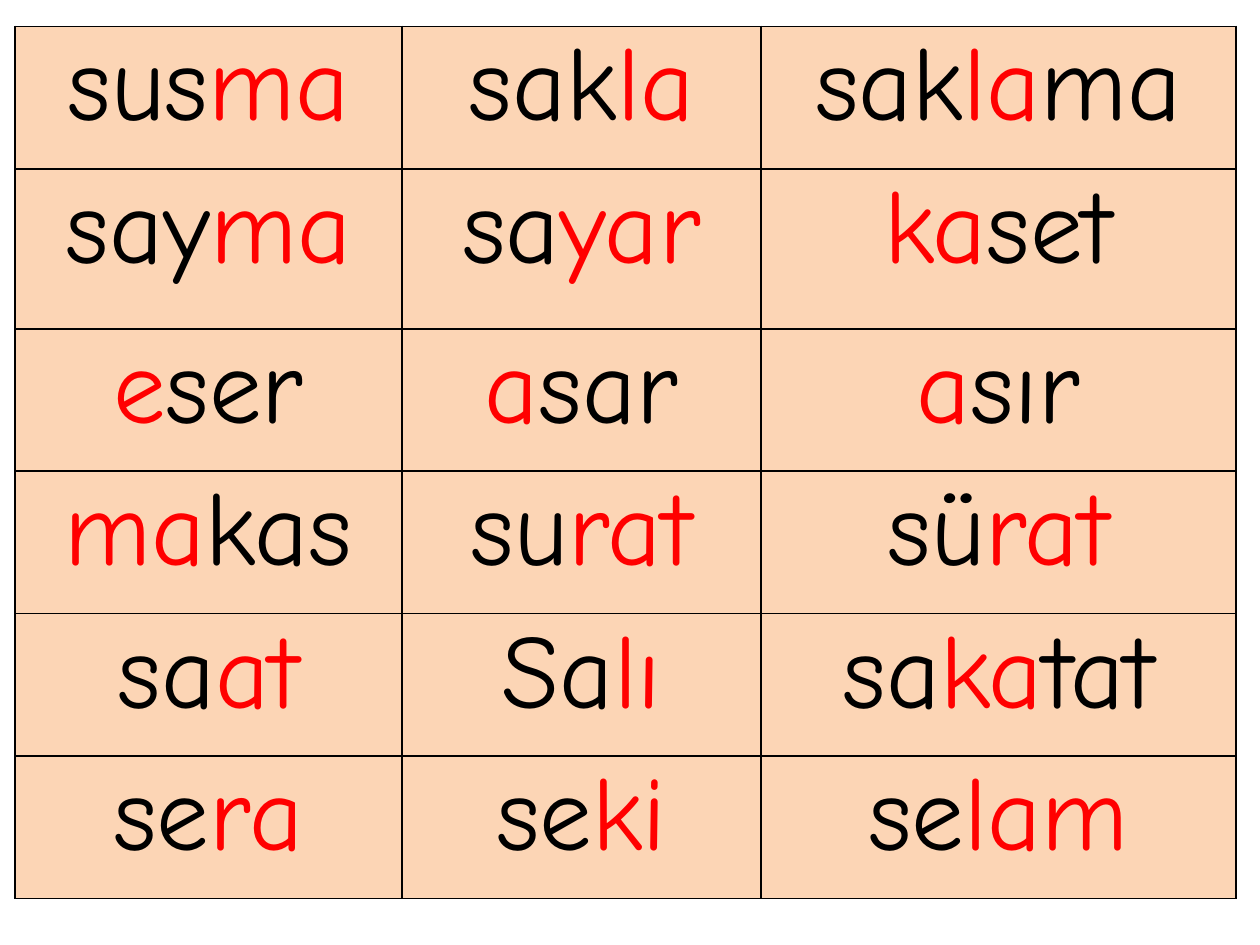
"""Build a slide with a table of Turkish words whose syllables alternate in black and red."""
import lxml.etree
import pptx
import pptx.dml.color
import pptx.enum.text
import pptx.oxml.ns
import pptx.util

Inches = pptx.util.Inches
Color = pptx.dml.color.RGBColor.from_string

theme = {
    "font": "Comic Neue",
    "size": pptx.util.Pt(60),
    "syllables": ("000000", "FF0000"),
    "cell": "FCD5B5",
    "border": "000000",
    "border_width": pptx.util.Pt(1),
}
words = [
    ["sus|ma", "sak|la", "sak|la|ma"],
    ["say|ma", "sa|yar", "|ka|set"],
    ["|e|ser", "|a|sar", "|a|sır"],
    ["|ma|kas", "su|rat", "sü|rat"],
    ["sa|at", "Sa|lı", "sa|ka|tat"],
    ["se|ra", "se|ki", "se|lam"],
]
column_widths = [3.07, 2.85, 3.77]
row_heights = [1.13, 1.27] + [1.13] * 4
cell_format = {
    "margin_left": Inches(0.07),
    "margin_right": Inches(0.07),
    "margin_top": 0,
    "margin_bottom": 0,
    "vertical_anchor": pptx.enum.text.MSO_ANCHOR.TOP,
}
font_format = {"name": theme["font"], "size": theme["size"], "bold": False}


def add_borders(cell):
    properties = cell._tc.get_or_add_tcPr()
    qn = pptx.oxml.ns.qn
    for side in ("lnL", "lnR", "lnT", "lnB"):
        line = lxml.etree.SubElement(properties, qn(f"a:{side}"), w=str(theme["border_width"]))
        fill = lxml.etree.SubElement(line, qn("a:solidFill"))
        lxml.etree.SubElement(fill, qn("a:srgbClr"), val=theme["border"])


deck = pptx.Presentation()
deck.slide_width, deck.slide_height = Inches(10), Inches(7.5)
page = deck.slides.add_slide(deck.slide_layouts[6])

frame = page.shapes.add_table(
    len(row_heights), len(column_widths), Inches(0.12), Inches(0.21),
    Inches(sum(column_widths)), Inches(sum(row_heights)),
)
table = frame.table
for column, width in zip(table.columns, column_widths):
    column.width = Inches(width)
for row, height in zip(table.rows, row_heights):
    row.height = Inches(height)

for row, row_words in zip(table.rows, words):
    for cell, word in zip(row.cells, row_words):
        for name, value in cell_format.items():
            setattr(cell, name, value)
        add_borders(cell)
        cell.fill.solid()
        cell.fill.fore_color.rgb = Color(theme["cell"])
        para = cell.text_frame.paragraphs[0]
        para.alignment = pptx.enum.text.PP_ALIGN.CENTER
        for index, syllable in enumerate(word.split("|")):
            if syllable:
                span = para.add_run()
                span.text = syllable
                for name, value in font_format.items():
                    setattr(span.font, name, value)
                span.font.color.rgb = Color(theme["syllables"][index % 2])

deck.save("out.pptx")
